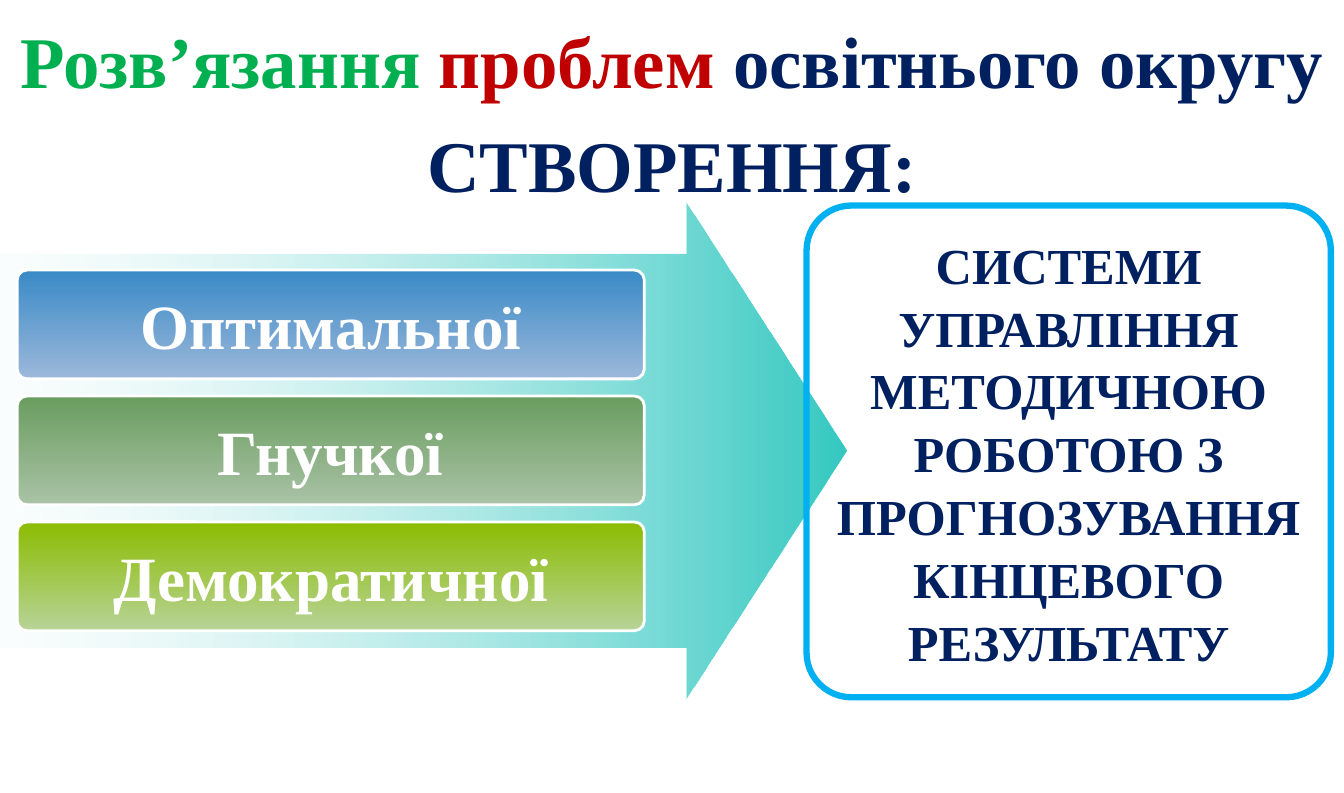
from lxml.etree import SubElement
from pptx import Presentation
from pptx.dml.color import RGBColor as RGB
from pptx.enum.shapes import MSO_SHAPE as SHAPE
from pptx.enum.text import MSO_ANCHOR as ANCHOR, PP_ALIGN as ALIGN
from pptx.oxml.ns import qn
from pptx.util import Inches, Pt

C = {"white": "FFFFFF", "teal": "35C9C2", "sky": "00B0F0", "navy": "002060",
     "green": "00B050", "red": "C00000"}
BARS = [("Оптимальної", "398AC7", "9CB8DA"),
        ("Гнучкої", "699D5F", "AAC2A6"),
        ("Демократичної", "8BBC00", "B8D398")]
TITLE = [("Розв’язання", "green"), (" проблем", "red"), (" освітнього округу", "navy"),
         ("\n", "navy"), ("СТВОРЕННЯ:", "navy")]
GOAL = "СИСТЕМИ УПРАВЛІННЯ МЕТОДИЧНОЮ РОБОТОЮ З ПРОГНОЗУВАННЯ КІНЦЕВОГО РЕЗУЛЬТАТУ"
BAR_TOP, BAR_STEP = 2.68, 1.25


def apply(obj, values):
    for name, value in values.items():
        setattr(obj, name, value)


def add_run(p, text, size, color):
    r = p.add_run()
    r.text = text
    apply(r.font, {"name": "Times New Roman", "size": Pt(size), "bold": True})
    r.font.color.rgb = RGB.from_string(C[color])


def fill_gradient(sp, colors, angle):
    sp.fill.gradient()
    sp.fill.gradient_angle = angle
    for stop, color in zip(sp.fill.gradient_stops, colors):
        stop.color.rgb = RGB.from_string(color)


def add_box(s, kind, at, adjustments, line=None, width=0):
    sp = s.shapes.add_shape(kind, *map(Inches, at))
    sp.shadow.inherit = False
    for i, value in enumerate(adjustments):
        sp.adjustments[i] = value
    if line:
        sp.line.color.rgb = RGB.from_string(C[line])
        sp.line.width = Pt(width)
    else:
        sp.line.fill.background()
    return sp


def add_label(sp, text, size, color, wrap, spacing=1.0):
    apply(sp.text_frame, {"word_wrap": wrap, "vertical_anchor": ANCHOR.MIDDLE})
    p = sp.text_frame.paragraphs[0]
    apply(p, {"alignment": ALIGN.CENTER, "line_spacing": spacing})
    add_run(p, text, size, color)


def add_title(s):
    sp = s.shapes.title
    apply(sp, {"left": 0, "top": Inches(0.23), "width": Inches(13.33), "height": Inches(1.58)})
    tf = sp.text_frame
    apply(tf, {"margin_left": Inches(0.14), "margin_right": Inches(0.14),
               "margin_top": Inches(0.07), "margin_bottom": Inches(0.07),
               "vertical_anchor": ANCHOR.MIDDLE, "word_wrap": True})
    p = tf.paragraphs[0]
    apply(p, {"alignment": ALIGN.CENTER, "line_spacing": Pt(74.6)})
    for text, color in TITLE:
        if text == "\n":
            p.add_line_break()
        else:
            add_run(p, text, 52, color)


def add_arrow(s):
    sp = add_box(s, SHAPE.RIGHT_ARROW, (-0.66, 2.01, 9.06, 4.92), (0.793, 0.324))
    fill_gradient(sp, (C["white"], C["teal"]), 0)
    first = next(sp._element.spPr.iter(qn("a:srgbClr")))
    SubElement(first, qn("a:alpha"), val="24000")


def add_bar(s, row, text, *colors):
    at = (0.17, BAR_TOP + row * BAR_STEP, 6.22, 1.08)
    sp = add_box(s, SHAPE.ROUNDED_RECTANGLE, at, (0.091,), "white", 2)
    fill_gradient(sp, colors, 270)
    add_label(sp, text, 45, "white", False)


def add_goal(s):
    sp = add_box(s, SHAPE.ROUNDED_RECTANGLE, (8, 2.04, 5.2, 4.88), (0.091,), "sky", 4.5)
    sp.fill.background()
    add_label(sp, GOAL, 36, "navy", True, 1.04)


def main():
    prs = Presentation()
    apply(prs, {"slide_width": Inches(13.33), "slide_height": Inches(7.87)})
    s = prs.slides.add_slide(prs.slide_layouts[5])
    add_title(s)
    add_arrow(s)
    for row, bar in enumerate(BARS):
        add_bar(s, row, *bar)
    add_goal(s)
    prs.save("out.pptx")


if __name__ == "__main__":
    main()
